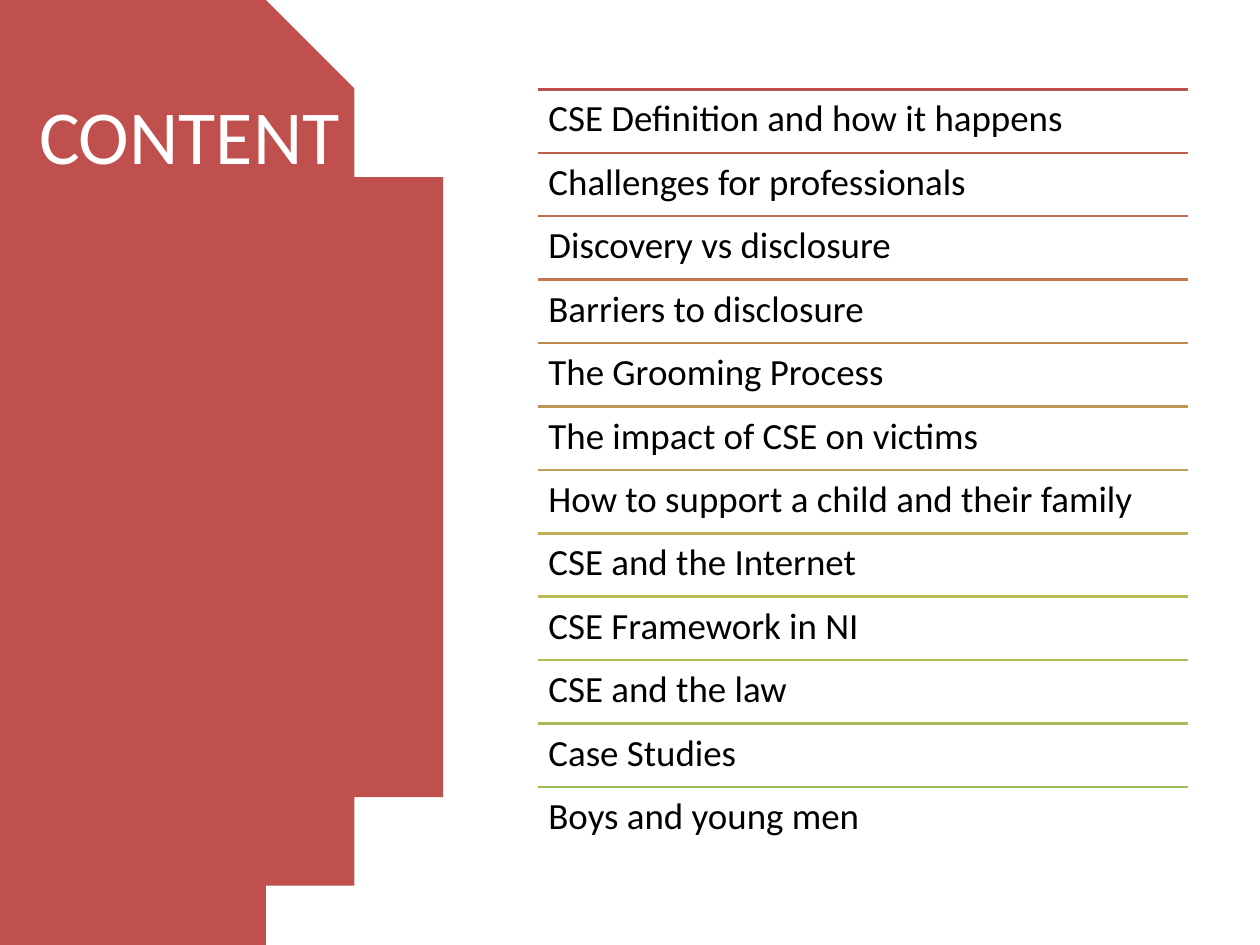
import colorsys

import pptx
import pptx.dml.color
import pptx.enum.shapes
import pptx.enum.text
import pptx.oxml
import pptx.util

RGB = pptx.dml.color.RGBColor
RED = RGB(0xC0, 0x50, 0x4D)
GREEN = RGB(0x9B, 0xBB, 0x59)
WHITE = RGB(0xFF, 0xFF, 0xFF)
BLACK = RGB(0, 0, 0)
inch = pptx.util.Inches

WIDTH, HEIGHT = 14.22, 10.67
LIST_LEFT, LIST_TOP, LIST_WIDTH, ROW = 6.07, 1.01, 7.34, 0.716
TOPICS = [
    "CSE Definition and how it happens",
    "Challenges for professionals",
    "Discovery vs disclosure",
    "Barriers to disclosure",
    "The Grooming Process",
    "The impact of CSE on victims",
    "How to support a child and their family",
    "CSE and the Internet",
    "CSE Framework in NI",
    "CSE and the law",
    "Case Studies",
    "Boys and young men",
]

prs = pptx.Presentation()
prs.slide_width, prs.slide_height = inch(WIDTH), inch(HEIGHT)
s = prs.slides.add_slide(prs.slide_layouts[6])


def add_text(text, left, top, width, height, *, size, color, inset=0, spacing=1.0):
    tf = s.shapes.add_textbox(inch(left), inch(top), inch(width), inch(height)).text_frame
    tf.word_wrap = True
    tf.vertical_anchor = pptx.enum.text.MSO_ANCHOR.TOP
    tf.margin_left = tf.margin_right = tf.margin_top = tf.margin_bottom = inch(inset)
    p = tf.paragraphs[0]
    p.line_spacing = spacing
    r = p.add_run()
    r.text = text
    r.font.name, r.font.size, r.font.color.rgb = "Calibri", pptx.util.Pt(size), color


# Red panel: the upper half of its edge is a Bezier curve, mirrored below
STEPS = 40
edge = []
for i in range(STEPS + 1):
    t = i / STEPS
    weights = ((1 - t) ** 3, 3 * t * (1 - t) ** 2, 3 * t ** 2 * (1 - t), t ** 3)
    edge.append((sum(w * x for w, x in zip(weights, (3.01, 4.36, 5.26, 5.26))),
                 sum(w * y for w, y in zip(weights, (0, 1.1, 3.07, HEIGHT / 2)))))
edge += [(x, HEIGHT - y) for x, y in reversed(edge[:-1])]
panel = s.shapes.build_freeform(0, 0, scale=inch(1))
panel.add_line_segments(edge + [(0, HEIGHT)], close=True)
sp = panel.convert_to_shape()
sp.shadow.inherit = False
sp.fill.solid()
sp.fill.fore_color.rgb = RED
sp.line.fill.background()

add_text("CONTENT", 0.44, 1, 3.98, 8.67, size=62, color=WHITE)

# Rules run from red to green in equal steps of hue, lightness and saturation
first, last = (colorsys.rgb_to_hls(*(c / 255 for c in rgb)) for rgb in (RED, GREEN))
for i, topic in enumerate(TOPICS):
    share = i / (len(TOPICS) - 1)
    hls = [a + (b - a) * share for a, b in zip(first, last)]
    top = LIST_TOP + i * ROW
    rule = s.shapes.add_connector(
        pptx.enum.shapes.MSO_CONNECTOR.STRAIGHT,
        inch(LIST_LEFT), inch(top), inch(LIST_LEFT + LIST_WIDTH), inch(top))
    rule.line.color.rgb = RGB(*(round(c * 255) for c in colorsys.hls_to_rgb(*hls)))
    rule.line.width = pptx.util.Pt(2)
    rule._element.spPr.append(pptx.oxml.parse_xml(
        '<a:effectLst xmlns:a="http://schemas.openxmlformats.org/drawingml/2006/main"/>'))
    add_text(topic, LIST_LEFT, top, LIST_WIDTH, ROW,
             size=30, color=BLACK, inset=0.12, spacing=0.9)

prs.save("out.pptx")
